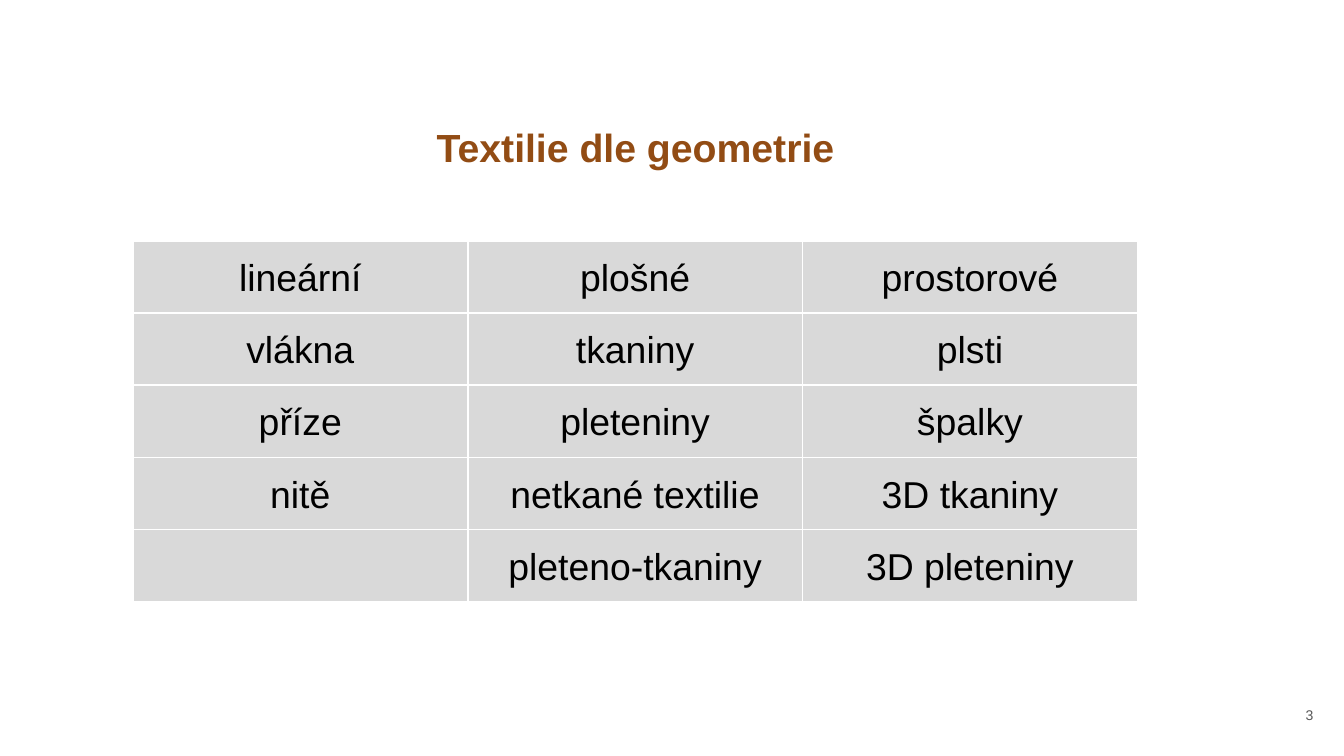
from lxml.etree import SubElement
from pptx import Presentation
from pptx.dml.color import RGBColor as RGB
from pptx.enum.text import MSO_ANCHOR as ANCHOR, MSO_AUTO_SIZE as AUTO, PP_ALIGN as ALIGN
from pptx.oxml.ns import qn
from pptx.util import Pt

TITLE = "Textilie dle geometrie"
ROWS = [
    ("lineární", "plošné", "prostorové"),
    ("vlákna", "tkaniny", "plsti"),
    ("příze", "pleteniny", "špalky"),
    ("nitě", "netkané textilie", "3D tkaniny"),
    ("", "pleteno-tkaniny", "3D pleteniny"),
]
PAGE = "3"
COLORS = {"title": "924C14", "text": "000000", "cell": "D9D9D9",
          "border": "FFFFFF", "page": "585858"}
FONT = "Arial"
COL_W, ROW_H = 179.4, 38.7


def write(p, text, size, color, align, bold=False):
    p.alignment = align
    r = p.add_run()
    r.text = text
    r.font.name = FONT
    r.font.size = Pt(size)
    r.font.bold = bold
    r.font.color.rgb = RGB.from_string(COLORS[color])


def set_margins(obj, left, top, right, bottom):
    obj.margin_left, obj.margin_top = Pt(left), Pt(top)
    obj.margin_right, obj.margin_bottom = Pt(right), Pt(bottom)


def add_borders(cell):
    tc_pr = cell._tc.get_or_add_tcPr()
    for side in ("lnL", "lnR", "lnT", "lnB"):
        ln = SubElement(tc_pr, qn(f"a:{side}"), w=str(Pt(1)))
        fill = SubElement(ln, qn("a:solidFill"))
        SubElement(fill, qn("a:srgbClr"), val=COLORS["border"])


prs = Presentation()
prs.slide_width, prs.slide_height = Pt(720), Pt(405)
s = prs.slides.add_slide(prs.slide_layouts[5])

sp = s.shapes.title
sp.left, sp.top, sp.width, sp.height = Pt(26.6), Pt(59), Pt(635), Pt(57)
tf = sp.text_frame
tf.auto_size = AUTO.NONE
tf.vertical_anchor = ANCHOR.TOP
set_margins(tf, 0, 7.2, 7.2, 7.2)
write(tf.paragraphs[0], TITLE, 21, "title", ALIGN.CENTER, bold=True)

n_rows, n_cols = len(ROWS), len(ROWS[0])
table = s.shapes.add_table(n_rows, n_cols, Pt(71.2), Pt(129),
                           Pt(COL_W * n_cols), Pt(ROW_H * n_rows)).table
for col in table.columns:
    col.width = Pt(COL_W)
for row, texts in zip(table.rows, ROWS):
    row.height = Pt(ROW_H)
    for cell, text in zip(row.cells, texts):
        add_borders(cell)
        cell.fill.solid()
        cell.fill.fore_color.rgb = RGB.from_string(COLORS["cell"])
        cell.vertical_anchor = ANCHOR.MIDDLE
        set_margins(cell, 5, 0, 5, 0)
        if text:
            p = cell.text_frame.paragraphs[0]
            p.line_spacing = 1.07
            write(p, text, 20, "text", ALIGN.CENTER)

sp = s.shapes.add_textbox(Pt(692), Pt(371), Pt(18.7), Pt(23.6))
tf = sp.text_frame
tf.word_wrap = False
tf.auto_size = AUTO.SHAPE_TO_FIT_TEXT
tf.vertical_anchor = ANCHOR.MIDDLE
set_margins(tf, 7.2, 7.2, 7.2, 7.2)
write(tf.paragraphs[0], PAGE, 7.5, "page", ALIGN.RIGHT)

prs.save("out.pptx")
